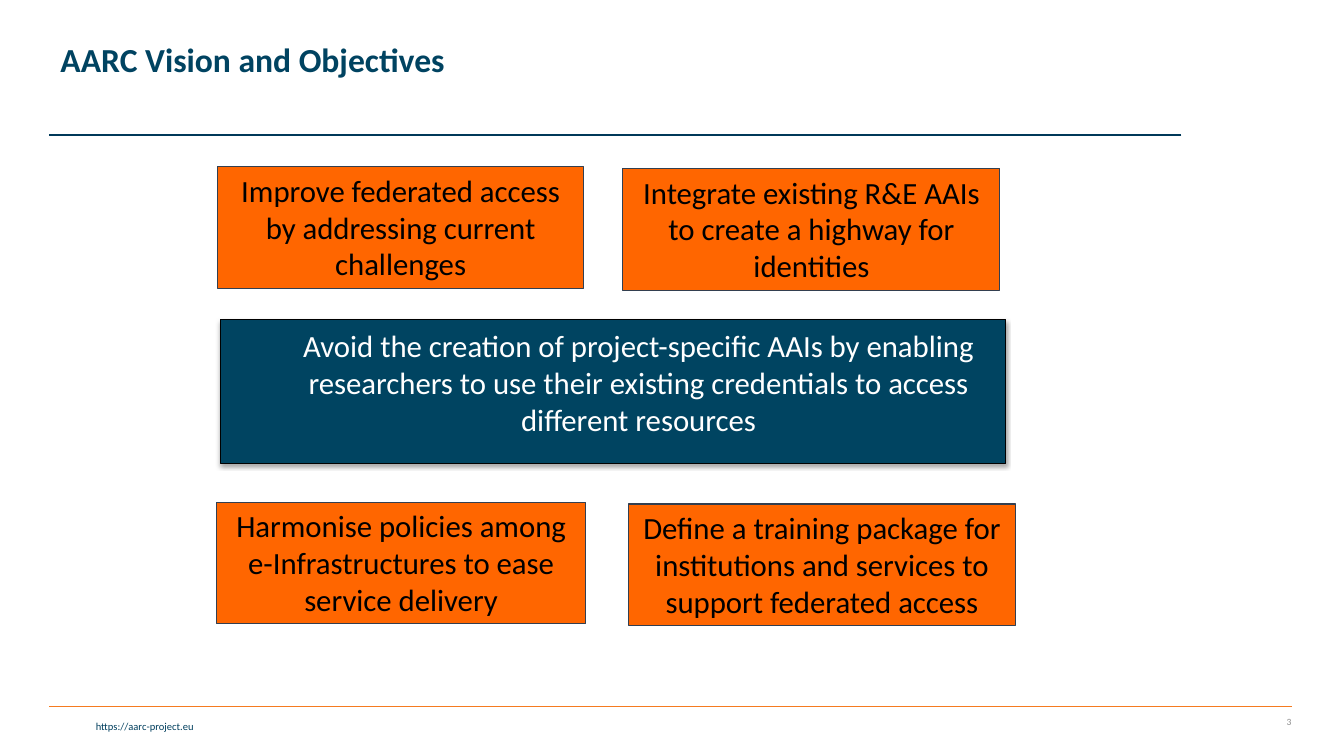
from lxml.etree import SubElement
from pptx import Presentation
from pptx.dml.color import RGBColor
from pptx.enum.shapes import MSO_CONNECTOR, MSO_SHAPE
from pptx.enum.text import MSO_ANCHOR, MSO_AUTO_SIZE, PP_ALIGN
from pptx.oxml.ns import qn
from pptx.util import Pt

COLORS = {
    "title": "004361", "rule": "003959", "accent": "F57B20",
    "link": "003F5E", "number": "8C8C8C",
    "orange": "FF6600", "border": "333F50", "navy": "004461",
    "black": "000000", "white": "FFFFFF",
}
FONT = "Calibri"

# Left, top, width, text
OBJECTIVES = [
    (155.5, 118.8, 261.4, "Improve federated access by addressing current challenges"),
    (445, 120.2, 269.3, "Integrate existing R&E AAIs to create a highway for identities"),
    (154.8, 358.6, 263.5,
     "Harmonise policies among e-Infrastructures to ease service delivery"),
    (449.3, 360, 275.8,
     "Define a training package for institutions and services to support federated access"),
]
VISION = ("Avoid the creation of project-specific AAIs by enabling researchers "
          "to use their existing credentials to access different resources")


def rgb(name):
    return RGBColor.from_string(COLORS[name])


def write(sp, text, size, color, align=PP_ALIGN.CENTER, anchor=MSO_ANCHOR.TOP,
          bold=False, indent=0, spacing=None):
    tf = sp.text_frame
    tf.word_wrap = True
    tf.auto_size = MSO_AUTO_SIZE.NONE
    tf.vertical_anchor = anchor
    p = tf.paragraphs[0]
    p.alignment = align
    p.line_spacing = spacing
    if indent:
        p._p.get_or_add_pPr().set("marL", str(Pt(indent)))
    r = p.add_run()
    r.text = text
    r.font.name = FONT
    r.font.size = Pt(size)
    r.font.bold = bold
    r.font.color.rgb = rgb(color)
    return tf


def add_rule(slide, x1, x2, y, color):
    line = slide.shapes.add_connector(
        MSO_CONNECTOR.STRAIGHT, Pt(x1), Pt(y), Pt(x2), Pt(y))
    line.line.color.rgb = rgb(color)
    line.line.width = Pt(1)
    SubElement(line._element.spPr, qn("a:effectLst"))


def add_label(slide, x, y, w, h, text, **fmt):
    sp = slide.shapes.add_textbox(Pt(x), Pt(y), Pt(w), Pt(h))
    write(sp, text, align=PP_ALIGN.RIGHT, **fmt)


def add_box(slide, x, y, w, h, fill, border):
    sp = slide.shapes.add_shape(MSO_SHAPE.RECTANGLE, Pt(x), Pt(y), Pt(w), Pt(h))
    sp.fill.solid()
    sp.fill.fore_color.rgb = rgb(fill)
    sp.line.color.rgb = rgb(border)
    sp.line.width = Pt(0.75)
    sp.shadow.inherit = False
    return sp


def add_drop_shadow(sp):
    effects = sp._element.spPr.find(qn("a:effectLst"))
    shadow = SubElement(effects, qn("a:outerShdw"), blurRad=str(Pt(3.1)),
                        dist=str(Pt(1.8)), dir="5400000", rotWithShape="0")
    color = SubElement(shadow, qn("a:srgbClr"), val=COLORS["black"])
    SubElement(color, qn("a:alpha"), val="35000")


def add_title(slide, text):
    sp = slide.shapes.title
    sp.left, sp.top, sp.width, sp.height = Pt(36), Pt(5.8), Pt(756.7), Pt(104.4)
    tf = write(sp, text, 24, "title", align=PP_ALIGN.LEFT, bold=True, spacing=0.9)
    tf.margin_top = Pt(25)


def add_vision(slide):
    sp = add_box(slide, 157.7, 228.2, 560.9, 103, "navy", "black")
    add_drop_shadow(sp)
    tf = write(sp, VISION, 22, "white", indent=36)
    tf.margin_left = tf.margin_right = tf.margin_top = tf.margin_bottom = Pt(5)


def main():
    prs = Presentation()
    prs.slide_width, prs.slide_height = Pt(960), Pt(540)
    slide = prs.slides.add_slide(prs.slide_layouts[5])

    # Header and footer
    add_title(slide, "AARC Vision and Objectives")
    add_rule(slide, 843.8, 35.3, 96.5, "rule")
    add_rule(slide, 35.3, 923, 504.7, "accent")
    add_label(slide, 2.2, 510.5, 143.3, 16.6, "https://aarc-project.eu",
              size=7.5, color="link")
    add_label(slide, 871.2, 504.7, 58.3, 21.6, "3",
              size=6.8, color="number", anchor=MSO_ANCHOR.MIDDLE)

    # Four objectives around the vision
    for x, y, w, text in OBJECTIVES:
        sp = add_box(slide, x, y, w, 87.1, "orange", "border")
        write(sp, text, 22, "black")
    add_vision(slide)

    prs.save("out.pptx")


if __name__ == "__main__":
    main()
